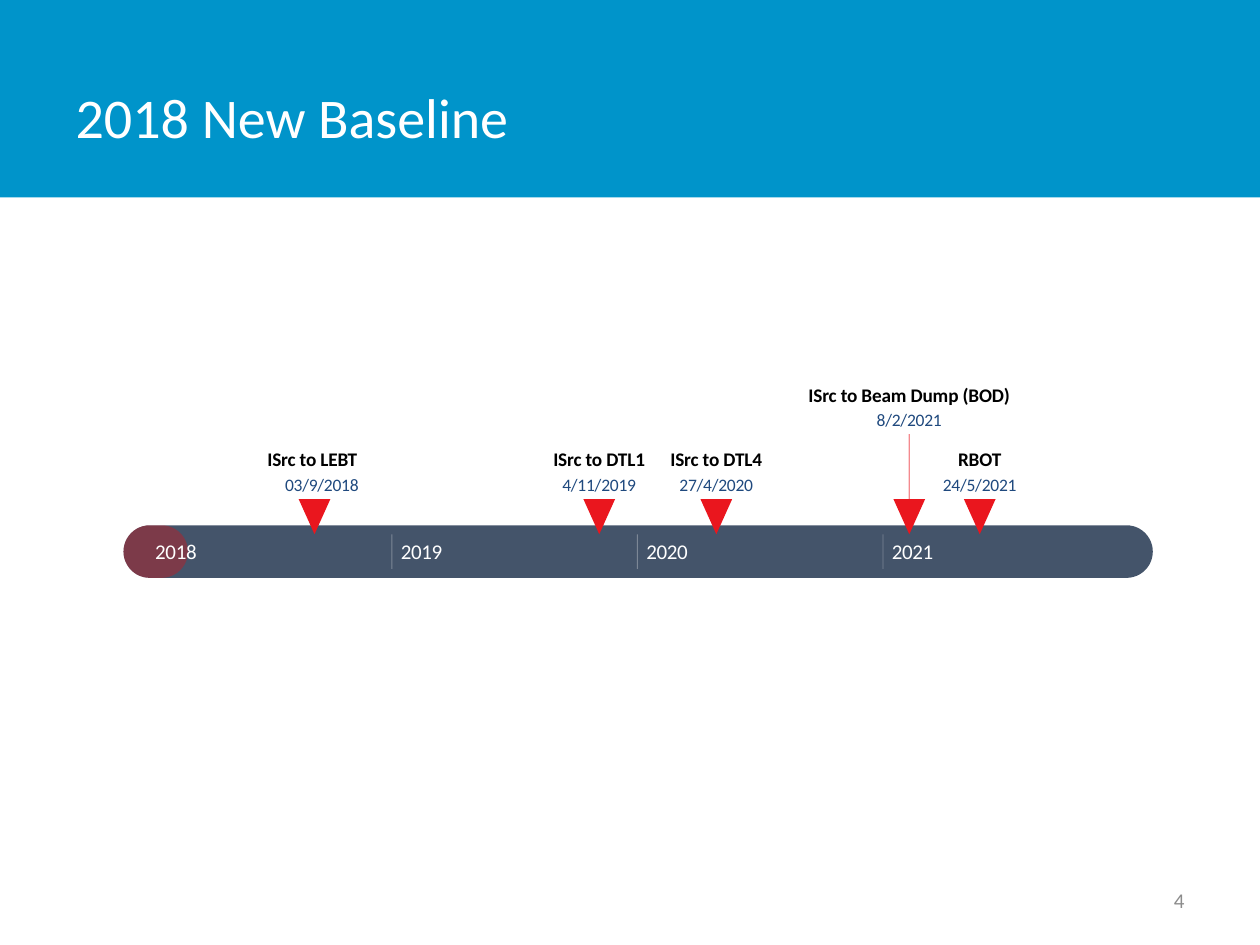
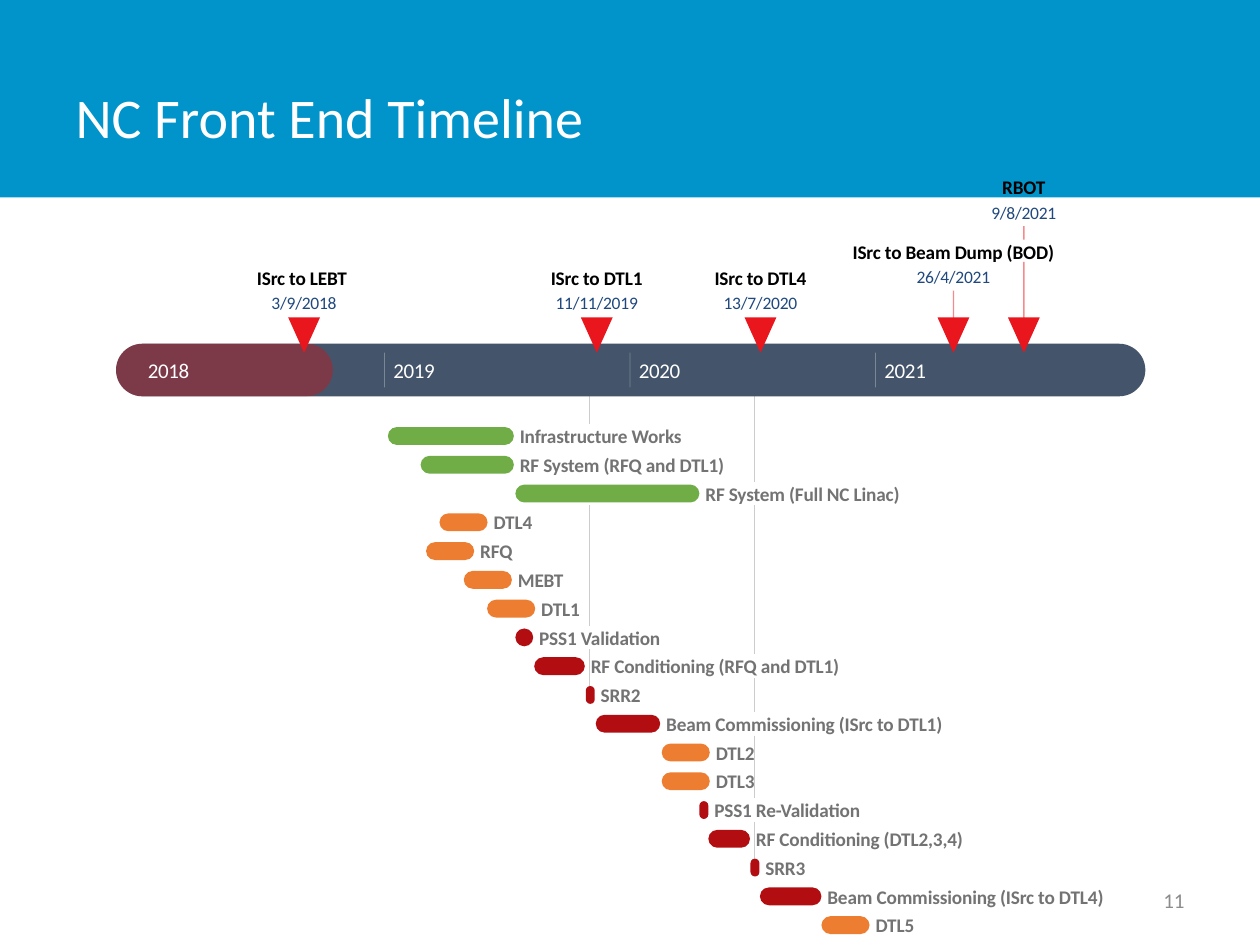
import pptx
import pptx.util
import pptx.dml.color
import pptx.enum.shapes
import pptx.enum.text
import pptx.oxml.ns
from lxml import etree
from collections import namedtuple

Cm = pptx.util.Cm
Pt = pptx.util.Pt
SHAPE = pptx.enum.shapes.MSO_SHAPE
ALIGN = pptx.enum.text.PP_ALIGN
qn = pptx.oxml.ns.qn

# Shared look
FONT = "Calibri"
WHITE, BLACK, GREY_TEXT, PAGE_GREY = "FFFFFF", "000000", "737373", "8C8C8C"
BAND, TIMELINE, ELAPSED = "0094CA", "44546A", "FF0000"
MILESTONE, DATE, GUIDE = "EA161E", "1F497E", "CCCCCC"
WORKS, INSTALL, COMMISSION = "70AD47", "ED7D31", "B20E12"

# Timeline geometry in centimetres
BAR_WIDTH, BAR_HEIGHT = 20.75, 1.06
YEARS, YEAR_STEP, FIRST_DIVIDER = range(2018, 2022), 4.95, 5.41
LABEL_RISE, DATE_RISE, MARKER_RISE = 1.57, 1.04, 0.53
LABEL_HEIGHT, DATE_HEIGHT = 0.48, 0.43

# Task rows in centimetres
FIRST_ROW, ROW_STEP, TASK_HEIGHT = 8.55, 0.58, 0.36

Milestone = namedtuple("Milestone", "x label width date lift date_shift gaps",
                       defaults=(0, 0, ()))

BASELINE = [
    Milestone(6.34, "ISrc to LEBT ", 1.93, "03/9/2018", date_shift=0.15),
    Milestone(12.08, "ISrc to DTL1", 1.91, "4/11/2019"),
    Milestone(14.44, "ISrc to DTL4", 1.91, "27/4/2020"),
    Milestone(18.33, "ISrc to Beam Dump (BOD)", 4.17, "8/2/2021", lift=1.3),
    Milestone(19.75, "RBOT", 0.91, "24/5/2021"),
]

FRONT_END = [
    Milestone(6.13, "ISrc to LEBT ", 1.93, "3/9/2018"),
    Milestone(12.03, "ISrc to DTL1", 1.91, "11/11/2019"),
    Milestone(15.33, "ISrc to DTL4", 1.91, "13/7/2020"),
    Milestone(19.22, "ISrc to Beam Dump (BOD)", 4.17, "26/4/2021", lift=0.53),
    Milestone(20.64, "RBOT", 0.91, "9/8/2021", lift=1.83, gaps=[(4.83, 5.28)]),
]

# Start, length, colour, label, label width
TASKS = [
    (7.82, 2.54, WORKS, "Infrastructure Works", 3.35),
    (8.48, 1.88, WORKS, "RF System (RFQ and DTL1)", 4.24),
    (10.39, 3.71, WORKS, "RF System (Full NC Linac)", 4.01),
    (8.86, 0.97, INSTALL, "DTL4", 0.81),
    (8.59, 0.97, INSTALL, "RFQ", 0.66),
    (9.35, 0.97, INSTALL, "MEBT", 0.97),
    (9.82, 0.97, INSTALL, "DTL1", 0.81),
    (10.39, 0.36, COMMISSION, "PSS1 Validation", 2.51),
    (10.77, 1.02, COMMISSION, "RF Conditioning (RFQ and DTL1)", 5.11),
    (11.81, 0.18, COMMISSION, "SRR2", 0.84),
    (12.01, 1.3, COMMISSION, "Beam Commissioning (ISrc to DTL1)", 5.69),
    (13.34, 0.97, INSTALL, "DTL2", 0.81),
    (13.34, 0.97, INSTALL, "DTL3", 0.81),
    (14.1, 0.18, COMMISSION, "PSS1 Re-Validation", 3.02),
    (14.28, 0.84, COMMISSION, "RF Conditioning (DTL2,3,4)", 4.27),
    (15.13, 0.18, COMMISSION, "SRR3", 0.84),
    (15.32, 1.24, COMMISSION, "Beam Commissioning (ISrc to DTL4)", 5.69),
    (16.56, 0.97, INSTALL, "DTL5", 0.81),
]

# Guide x, row it ends at, spans of rows where it is interrupted
GUIDES = [
    (11.89, 9, [(0, 2), (7, 7)]),
    (15.21, 15, [(2, 2), (8, 8), (10, 10), (13, 13)]),
]


def rgb(colour):
    return pptx.dml.color.RGBColor.from_string(colour)


def set_opacity(shape, percent):
    for colour in shape._element.spPr.iter(qn("a:srgbClr")):
        etree.SubElement(colour, qn("a:alpha")).set("val", str(percent * 1000))


def write(frame, text, size=11, colour=BLACK, bold=False, align=ALIGN.LEFT,
          tracking=0):
    frame.vertical_anchor = pptx.enum.text.MSO_ANCHOR.MIDDLE
    paragraph = frame.paragraphs[0]
    paragraph.alignment = align
    run = paragraph.add_run()
    run.text = text
    run.font.name = FONT
    run.font.size = Pt(size)
    run.font.bold = bold
    run.font.color.rgb = rgb(colour)
    if tracking:
        run._r.get_or_add_rPr().set("spc", str(tracking))


def add_label(slide, left, top, width, height, text, **style):
    frame = slide.shapes.add_textbox(
        Cm(left), Cm(top), Cm(width), Cm(height)).text_frame
    frame.word_wrap = False
    frame.margin_left = frame.margin_right = 0
    frame.margin_top = frame.margin_bottom = 0
    write(frame, text, **style)


def add_block(slide, kind, left, top, width, height, colour):
    block = slide.shapes.add_shape(
        kind, Cm(left), Cm(top), Cm(width), Cm(height))
    block.shadow.inherit = False
    block.fill.solid()
    block.fill.fore_color.rgb = rgb(colour)
    block.line.fill.background()
    return block


def add_pill(slide, left, top, width, height, colour):
    pill = add_block(slide, SHAPE.ROUNDED_RECTANGLE, left, top, width, height,
                     colour)
    pill.adjustments[0] = 0.5
    return pill


def add_vertical(slide, x, top, bottom, colour, weight=0.75, opacity=100,
                 gaps=()):
    """Draw a vertical line, interrupted at each (top, bottom) gap."""
    starts = [top] + [gap[1] for gap in gaps]
    ends = [gap[0] for gap in gaps] + [bottom]
    for start, end in zip(starts, ends):
        line = slide.shapes.add_connector(
            pptx.enum.shapes.MSO_CONNECTOR.STRAIGHT,
            Cm(x), Cm(start), Cm(x), Cm(end))
        line.line.color.rgb = rgb(colour)
        line.line.width = Pt(weight)
        etree.SubElement(line._element.spPr, qn("a:effectLst"))
        if opacity < 100:
            set_opacity(line, opacity)


def add_stems(slide, milestones, bar_top):
    for item in milestones:
        if item.lift:
            start = bar_top - DATE_RISE - item.lift + 0.5
            add_vertical(slide, item.x, start, bar_top - 0.18, MILESTONE,
                         opacity=50, gaps=item.gaps)


def add_year_bar(slide, left, top, elapsed):
    add_pill(slide, left, top, BAR_WIDTH, BAR_HEIGHT, TIMELINE)
    set_opacity(add_pill(slide, left, top, elapsed, BAR_HEIGHT, ELAPSED), 30)
    for index, year in enumerate(YEARS):
        year_left = left + 0.64
        if index:
            divider = left + FIRST_DIVIDER + (index - 1) * YEAR_STEP
            add_vertical(slide, divider, top + 0.18, top + 0.88, WHITE,
                         weight=0.5, opacity=30)
            year_left = divider + 0.18
        add_label(slide, year_left, top + 0.27, 0.84, 0.51, str(year),
                  size=12, colour=WHITE, tracking=-20)


def add_milestone(slide, item, bar_top):
    add_label(slide, item.x - item.width / 2, bar_top - LABEL_RISE - item.lift,
              item.width, LABEL_HEIGHT, item.label, bold=True,
              align=ALIGN.CENTER, tracking=-10)
    date_width = 0.17 * len(item.date)
    add_label(slide, item.x - date_width / 2 + item.date_shift,
              bar_top - DATE_RISE - item.lift, date_width, DATE_HEIGHT,
              item.date, size=10, colour=DATE, align=ALIGN.CENTER, tracking=-10)
    marker = add_block(slide, SHAPE.ISOSCELES_TRIANGLE, item.x - 0.32,
                       bar_top - MARKER_RISE, 0.64, 0.71, MILESTONE)
    marker.rotation = 180


def add_timeline(slide, left, top, elapsed, milestones):
    add_stems(slide, milestones, top)
    add_year_bar(slide, left, top, elapsed)
    for item in milestones:
        add_milestone(slide, item, top)


def row_top(row):
    return FIRST_ROW + row * ROW_STEP


def add_guides(slide, top):
    for x, last_row, spans in GUIDES:
        gaps = [(row_top(first), row_top(last) + LABEL_HEIGHT)
                for first, last in spans]
        add_vertical(slide, x, top, row_top(last_row) + 0.06, GUIDE, gaps=gaps)


def add_tasks(slide):
    for row, (start, length, colour, label, width) in enumerate(TASKS):
        top = row_top(row)
        add_pill(slide, start, top + 0.06, length, TASK_HEIGHT, colour)
        add_label(slide, start + length + 0.12, top, width, LABEL_HEIGHT,
                  label, colour=GREY_TEXT, bold=True, tracking=-10)


def add_page(deck, title, number):
    slide = deck.slides.add_slide(deck.slide_layouts.get_by_name("Title Only"))
    heading = slide.shapes.title
    heading.left, heading.top = Cm(1.27), Cm(0.76)
    heading.width, heading.height = Cm(19.84), Cm(3.18)
    write(heading.text_frame, title, size=32, colour=WHITE)
    # Title band, behind everything else
    band = add_block(slide, SHAPE.RECTANGLE, 0, 0, 25.4, 3.98, BAND)
    slide.shapes._spTree.insert(2, band._element)
    # Page number
    page = slide.shapes.add_textbox(Cm(18.2), Cm(17.65), Cm(5.93), Cm(1.01))
    page.text_frame.word_wrap = True
    write(page.text_frame, str(number), size=12, colour=PAGE_GREY,
          align=ALIGN.RIGHT)
    return slide


def main():
    deck = pptx.Presentation()
    deck.slide_width, deck.slide_height = Cm(25.4), Cm(19.05)

    baseline = add_page(deck, "2018 New Baseline", 4)
    add_timeline(baseline, 2.49, 10.59, 1.3, BASELINE)

    front_end = add_page(deck, "NC Front End Timeline", 11)
    bar_top = 6.93
    add_guides(front_end, bar_top + BAR_HEIGHT)
    add_timeline(front_end, 2.34, bar_top, 4.37, FRONT_END)
    add_tasks(front_end)

    deck.save("out.pptx")


if __name__ == "__main__":
    main()
